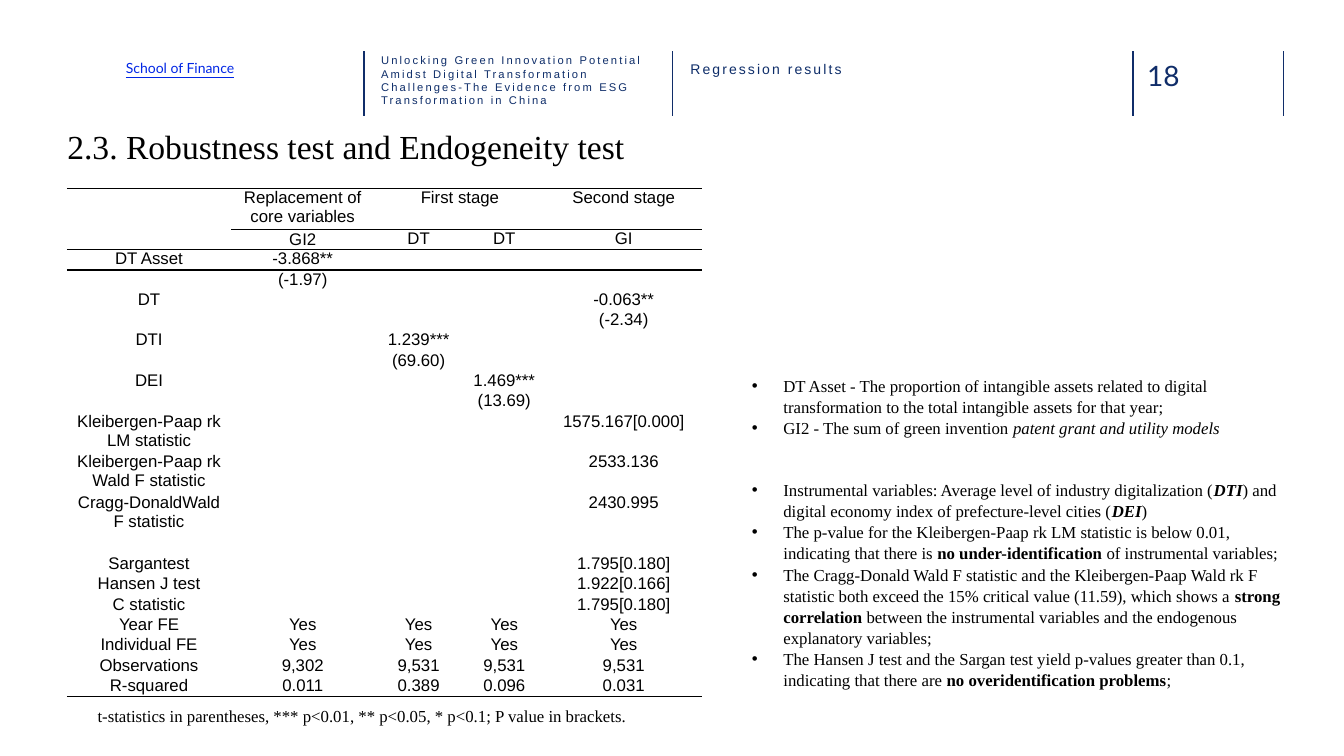
from lxml.etree import SubElement
from pptx import Presentation
from pptx.dml.color import RGBColor
from pptx.enum.shapes import MSO_CONNECTOR
from pptx.enum.text import MSO_ANCHOR, PP_ALIGN
from pptx.oxml.ns import qn
from pptx.util import Pt

NAVY = RGBColor(0x10, 0x2D, 0x69)
INK = RGBColor(0x0E, 0x2D, 0x69)
BLUE = RGBColor(0x00, 0x26, 0xE5)
BLACK = RGBColor(0x00, 0x00, 0x00)
SERIF = "Times New Roman"
PLAIN = "{2D5ABB26-0587-4C30-8999-92F81FD0307C}"  # table style without grid

UNIT = 14.54  # height of a one-line table row
WIDTHS = [117.36, 102.24, 63.36, 59.04, 111.6]
TALL = {0: 2, 10: 2, 11: 2, 12: 3}  # rows of several units
ROWS = [
    ["", "Replacement of core variables", "First stage", "", "Second stage"],
    ["", "GI2", "DT", "DT", "GI"],
    ["DT Asset", "-3.868**", "", "", ""],
    ["", "(-1.97)", "", "", ""],
    ["DT", "", "", "", "-0.063**"],
    ["", "", "", "", "(-2.34)"],
    ["DTI", "", "1.239***", "", ""],
    ["", "", "(69.60)", "", ""],
    ["DEI", "", "", "1.469***", ""],
    ["", "", "", "(13.69)", ""],
    ["Kleibergen-Paap rk LM statistic", "", "", "", "1575.167[0.000]"],
    ["Kleibergen-Paap rk Wald F statistic", "", "", "", "2533.136"],
    ["Cragg-DonaldWald F statistic", "", "", "", "2430.995"],
    ["Sargantest", "", "", "", "1.795[0.180]"],
    ["Hansen J test", "", "", "", "1.922[0.166]"],
    ["C statistic", "", "", "", "1.795[0.180]"],
    ["Year FE", "Yes", "Yes", "Yes", "Yes"],
    ["Individual FE", "Yes", "Yes", "Yes", "Yes"],
    ["Observations", "9,302", "9,531", "9,531", "9,531"],
    ["R-squared", "0.011", "0.389", "0.096", "0.031"],
]
# Each note is a list of (text, style), with b for bold and i for italic
NOTES = [
    [("DT Asset - The proportion of intangible assets related to digital "
      "transformation to the total intangible assets for that year;", "")],
    [("GI2 - The sum of green invention ", ""),
     ("patent grant and utility models", "i")],
    [("Instrumental variables: Average level of industry digitalization (", ""),
     ("DTI", "bi"),
     (") and digital economy index of prefecture-level cities (", ""),
     ("DEI", "bi"), (")", "")],
    [("The p-value for the Kleibergen-Paap rk LM statistic is below 0.01, "
      "indicating that there is ", ""),
     ("no under-identification", "b"), (" of instrumental variables;", "")],
    [("The Cragg-Donald Wald F statistic and the Kleibergen-Paap Wald rk F "
      "statistic both exceed the 15% critical value (11.59), which shows a ", ""),
     ("strong correlation", "b"),
     (" between the instrumental variables and the endogenous explanatory "
      "variables;", "")],
    [("The Hansen J test and the Sargan test yield p-values greater than 0.1, "
      "indicating that there are ", ""),
     ("no overidentification problems", "b"), (";", "")],
]
GROUP = 2  # index of the first note of the second group


def style(run, size, face, color):
    run.font.size = Pt(size)
    run.font.name = face
    run.font.color.rgb = color


def add_box(slide, left, top, width, height, inset=True):
    box = slide.shapes.add_textbox(Pt(left), Pt(top), Pt(width), Pt(height))
    frame = box.text_frame
    frame.word_wrap = True
    if not inset:
        frame.margin_left = frame.margin_right = 0
        frame.margin_top = frame.margin_bottom = 0
    return frame


def add_label(slide, text, place, size, face, color, inset=False, gap=0):
    frame = add_box(slide, *place, inset)
    frame.text = text
    run = frame.paragraphs[0].runs[0]
    style(run, size, face, color)
    if gap:
        run.font._element.set("spc", str(gap))
    return run


def add_rule(slide, x):
    line = slide.shapes.add_connector(
        MSO_CONNECTOR.STRAIGHT, Pt(x), Pt(36.7), Pt(x), Pt(82.8))
    line.line.color.rgb = NAVY
    line.line.width = Pt(1)
    SubElement(line._element.spPr, qn("a:effectLst"))


def set_edge(cell, tag, width):
    edge = SubElement(cell._tc.get_or_add_tcPr(), qn(tag), w=str(Pt(width)))
    fill = SubElement(edge, qn("a:solidFill"))
    SubElement(fill, qn("a:srgbClr"), val=str(BLACK))


def fill_cell(cell, text):
    cell.margin_left = cell.margin_right = Pt(5)
    cell.margin_top = cell.margin_bottom = 0
    cell.text = text
    para = cell.text_frame.paragraphs[0]
    para.alignment = PP_ALIGN.CENTER
    for run in para.runs:
        style(run, 12, "Arial", BLACK)
    if not text:
        SubElement(para._p, qn("a:endParaRPr"), sz="1200")


def add_grid(slide):
    high = [UNIT * TALL.get(i, 1) for i in range(len(ROWS))]
    frame = slide.shapes.add_table(
        len(ROWS), len(WIDTHS), Pt(47.8), Pt(134.6),
        Pt(sum(WIDTHS)), Pt(sum(high)))
    table = frame.table
    table._tbl.tblPr.find(qn("a:tableStyleId")).text = PLAIN
    table.first_row = table.horz_banding = False
    for col, width in zip(table.columns, WIDTHS):
        col.width = Pt(width)
    # Horizontal rules: width of the line above and below each row
    above = {0: 1, 1: 1, 2: 1.5}
    below = {0: 1, 1: 1.5, len(ROWS) - 1: 1}
    for r, row in enumerate(ROWS):
        table.rows[r].height = Pt(high[r])
        for c, text in enumerate(row):
            cell = table.cell(r, c)
            fill_cell(cell, text)
            if r in above and (r, c) != (1, 0):
                set_edge(cell, "a:lnT", above[r])
            if r in below and (r, c) != (0, 0):
                set_edge(cell, "a:lnB", below[r])
            cell.fill.background()
    table.cell(0, 2).merge(table.cell(0, 3))
    table.cell(1, 1).vertical_anchor = MSO_ANCHOR.MIDDLE


def add_notes(slide):
    frame = add_box(slide, 530, 264.2, 398.2, 235.4)
    for i, note in enumerate(NOTES):
        para = frame.paragraphs[0] if i == 0 else frame.add_paragraph()
        para.line_spacing = 1.05
        if i == GROUP:
            para.space_before = Pt(28.9)
        props = para._p.get_or_add_pPr()
        props.set("marL", str(Pt(22.5)))
        props.set("indent", str(Pt(-22.5)))
        SubElement(props, qn("a:buFont"), typeface="Arial")
        SubElement(props, qn("a:buChar"), char="•")
        for text, kind in note:
            run = para.add_run()
            run.text = text
            style(run, 12, SERIF, BLACK)
            run.font.bold = "b" in kind
            run.font.italic = "i" in kind


def main():
    deck = Presentation()
    deck.slide_width, deck.slide_height = Pt(960), Pt(540)
    slide = deck.slides.add_slide(deck.slide_layouts[6])

    # Header band
    for x in (260, 480.2, 809.3, 916.6):
        add_rule(slide, x)
    add_label(slide, "18", (819.4, 41.8, 52.6, 24.5), 20, "Lato", NAVY)
    school = add_label(slide, "School of Finance", (90, 42.5, 150, 32.4),
                       10, "Lato", BLUE)
    school.font.underline = True
    add_label(slide, "Regression results", (493.2, 43.2, 162.7, 32.4),
              10, "Arial", INK, gap=150)
    add_label(slide, "Unlocking Green Innovation Potential Amidst Digital "
              "Transformation Challenges-The Evidence from ESG "
              "Transformation in China", (272.2, 38.2, 207.4, 48.2),
              8, "Arial", INK, gap=150)

    # Title, results table and its footnote
    add_label(slide, "2.3. Robustness test and Endogeneity test",
              (41, 86.4, 835.2, 36), 24, SERIF, BLACK, inset=True)
    add_grid(slide)
    add_label(slide, "t-statistics in parentheses, *** p<0.01, ** p<0.05, "
              "* p<0.1; P value in brackets.", (62.6, 500.4, 467.3, 21.6),
              12, SERIF, BLACK, inset=True)

    # Explanations on the right
    add_notes(slide)
    deck.save("out.pptx")


if __name__ == "__main__":
    main()
